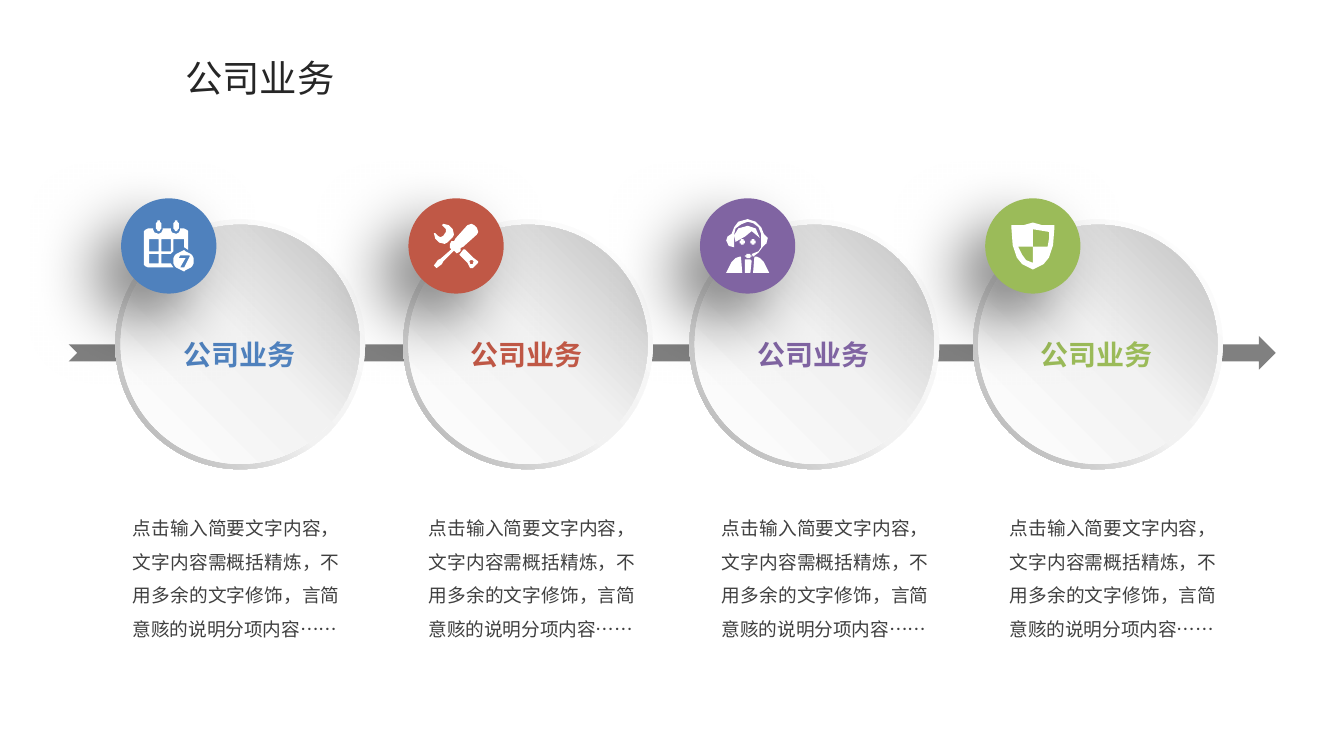
from math import cos, pi, sin

from lxml import etree
from pptx import Presentation
from pptx.dml.color import RGBColor
from pptx.enum.shapes import MSO_SHAPE
from pptx.enum.text import MSO_AUTO_SIZE, PP_ALIGN
from pptx.oxml import parse_xml
from pptx.oxml.ns import qn
from pptx.util import Cm, Pt

OVAL, DONUT, ARROW = MSO_SHAPE.OVAL, MSO_SHAPE.DONUT, MSO_SHAPE.NOTCHED_RIGHT_ARROW
LEFT, MID, FULL = PP_ALIGN.LEFT, PP_ALIGN.CENTER, PP_ALIGN.JUSTIFY
GROW = MSO_AUTO_SIZE.SHAPE_TO_FIT_TEXT
FONT = "Noto Sans CJK SC"
NS = 'xmlns:a="http://schemas.openxmlformats.org/drawingml/2006/main"'
UNIT = Cm(2.54) / 100

COLORS = {
    "title": "262626", "body": "404040", "arrow": "808080", "white": "FFFFFF",
    "blue": "4F81BD", "red": "C05846", "violet": "8064A2", "green": "9BBB59",
}
HEAD = "公司业务"
BODY = "点击输入简要文字内容，文字内容需概括精炼，不用多余的文字修饰，言简意赅的说明分项内容……"
RIM = [(0, "FFFFFF"), (55, "F2F2F2"), (100, "A6A6A6")]
FACE = [(0, "FFFFFF"), (51, "F2F2F2"), (100, "BFBFBF")]


def oval(x, y, rx, ry):
    turns = [2 * pi * i / 24 for i in range(24)]
    return [(x + rx * cos(t), y + ry * sin(t)) for t in turns]


def rect(x, y, w, h):
    return [(x, y), (x + w, y), (x + w, y + h), (x, y + h)]


DATE = [
    [(3, 6), (7, 6), (7, 7), (8, 9), (11, 10), (13, 9), (14, 7), (14, 6), (20, 6),
     (20, 7), (21, 9), (24, 10), (26, 9), (27, 7), (27, 6), (30, 6), (32, 7), (33, 8),
     (33, 22), (30, 20), (30, 14), (22, 14), (22, 23), (20, 25), (13, 25), (13, 32),
     (20, 32), (22, 35), (3, 35), (1, 34), (0, 33), (0, 8), (1, 7)],
    oval(11, 4, 2, 4), oval(24, 4, 2, 4),
    rect(4, 14, 7, 9), rect(13, 14, 7, 9), rect(4, 25, 7, 7),
    oval(29.5, 30, 7.5, 7.5),
    [(27, 26), (34, 26), (34, 27), (30, 35), (27, 35), (31, 28), (26, 28)],
]
TOOLS = [
    [(22, 19), (19, 23), (25, 29), (27, 33), (29, 33), (33, 29), (33, 28), (29, 25), (23, 19)],
    oval(28, 28.5, 1.5, 1.5),
    [(12, 12), (14, 10), (15, 8), (14, 4), (11, 1), (7, 0), (6, 1), (9, 4), (9, 6), (7, 9),
     (5, 10), (3, 9), (1, 7), (0, 7), (1, 11), (4, 14), (8, 15), (10, 14)],
    [(32, 3), (30, 1), (28, 0), (25, 1), (16, 11), (15, 13), (13, 13), (11.5, 15),
     (12, 18), (13, 19), (5, 26), (3, 27), (0, 31), (2, 33), (6, 30), (7, 28), (15, 20),
     (17, 22), (19, 21), (20, 20), (20, 18), (22, 17), (32, 8), (33, 6)],
]
AGENT = [
    [(4, 11), (5.5, 6), (9, 2), (15.5, 0), (22, 2), (26, 6), (28, 11), (31, 14),
     (30.5, 18), (27, 21), (24, 25), (20, 28), (19, 26), (24, 24), (26, 21), (26, 11),
     (24, 6), (20, 3), (16, 2), (11, 3.5), (7, 7), (6, 11), (6, 21), (2, 20), (0.5, 16), (1, 13)],
    [(7, 17), (6.5, 12), (9, 7), (15.5, 5), (22, 7), (25, 14), (19, 9), (14, 13)],
    oval(12, 17, 2, 2), oval(20, 17, 2, 2), oval(16.5, 27.5, 2.2, 1.5),
    [(23, 28), (21, 28), (20, 40), (32, 40), (28, 32), (25, 29)],
    [(10, 28), (7, 29), (4, 32), (0, 40), (12, 40), (11, 28)],
    [(14, 30), (18, 30), (19, 31), (18, 40), (14, 40), (14, 31)],
]
SHIELD = [
    [(0, 2), (9, 2), (16, 0), (23, 2), (32, 2), (32, 4), (31, 17), (28, 26), (24, 31),
     (16, 35), (8, 31), (4, 26), (1, 17), (0, 4)],
    [(16, 5), (22, 6.5), (28, 7), (28, 12), (27, 18), (16, 18)],
    [(16, 18), (5, 18), (8, 24), (11, 28), (16, 30)],
]
ITEMS = [
    ("blue", 2.18, 2.29, 2.51, DATE),
    ("red", 7.62, 7.72, 8.1, TOOLS),
    ("violet", 13.03, 13.23, 13.64, AGENT),
    ("green", 18.39, 18.62, 19.08, SHIELD),
]
TITLE = {"size": Pt(20)}
LABEL = {"size": Pt(15), "bold": True}
NOTE = {"size": Pt(10)}

deck = Presentation()
deck.slide_width, deck.slide_height = Cm(25.4), Cm(14.29)
slide = deck.slides.add_slide(deck.slide_layouts[6])
shapes = slide.shapes


def paint(shape, color):
    shape.shadow.inherit = False
    shape.line.fill.background()
    shape.fill.solid()
    shape.fill.fore_color.rgb = RGBColor.from_string(COLORS[color])
    return shape


def add(kind, x, y, w, h, color):
    return paint(shapes.add_shape(kind, Cm(x), Cm(y), Cm(w), Cm(h)), color)


def blend(shape, stops, angle):
    marks = "".join(f'<a:gs pos="{p * 1000}"><a:srgbClr val="{c}"/></a:gs>' for p, c in stops)
    grad = parse_xml(f'<a:gradFill {NS} rotWithShape="1"><a:gsLst>{marks}</a:gsLst>'
                     f'<a:lin ang="{angle * 60000}" scaled="0"/></a:gradFill>')
    props = shape.fill._xPr
    props.replace(props.find(qn("a:solidFill")), grad)


def shade(shape):
    glow = parse_xml(f'<a:outerShdw {NS} blurRad="{Pt(35)}" dist="{Pt(20)}" dir="{135 * 60000}" '
                     'algn="tr" rotWithShape="0"><a:srgbClr val="000000">'
                     '<a:alpha val="50000"/></a:srgbClr></a:outerShdw>')
    shape._element.spPr.find(qn("a:effectLst")).append(glow)


def write(text, x, y, w, h, color, style, align, pad=(0.25, 0.13), wrap=False, space=1):
    box = shapes.add_textbox(Cm(x), Cm(y), Cm(w), Cm(h))
    frame = box.text_frame
    side, edge = map(Cm, pad)
    look = {"margin_left": side, "margin_right": side, "margin_top": edge,
            "margin_bottom": edge, "word_wrap": wrap, "auto_size": GROW}
    for key, val in look.items():
        setattr(frame, key, val)
    para = frame.paragraphs[0]
    para.alignment, para.line_spacing = align, space
    run = para.add_run()
    run.text = text
    for key, val in {"name": FONT, **style}.items():
        setattr(run.font, key, val)
    run.font.color.rgb = RGBColor.from_string(COLORS[color])
    etree.SubElement(run._r.get_or_add_rPr(), qn("a:ea"), typeface=FONT)


def draw(icon, badge):
    pen = shapes.build_freeform(*icon[0][0], scale=UNIT)
    pen.add_line_segments(icon[0][1:])
    for ring in icon[1:]:
        pen.move_to(*ring[0])
        pen.add_line_segments(ring[1:])
    sign = paint(pen.convert_to_shape(), "white")
    sign.left = badge.left + (badge.width - sign.width) // 2
    sign.top = badge.top + (badge.height - sign.height) // 2


write(HEAD, 3.3, 0.94, 3.23, 1.04, "title", TITLE, LEFT, (0.2, 0.1))
add(ARROW, 1.3, 6.35, 22.81, 0.64, "arrow")
for color, disc, _, note, _ in ITEMS:
    rim = add(DONUT, disc, 4.15, 4.72, 4.72, "white")
    rim.adjustments[0] = 0.049
    blend(rim, RIM, 135)
    blend(add(OVAL, disc + 0.1, 4.25, 4.52, 4.52, "white"), FACE, 315)
    write(HEAD, disc + 1.02, 6.25, 2.64, 0.89, color, LABEL, MID)
    write(BODY, note, 9.56, 3.91, 2.57, "body", NOTE, FULL, (0, 0), True, 1.5)
for color, _, left, _, icon in ITEMS:
    badge = add(OVAL, left, 3.75, 1.8, 1.8, color)
    shade(badge)
    draw(icon, badge)

deck.save("out.pptx")
